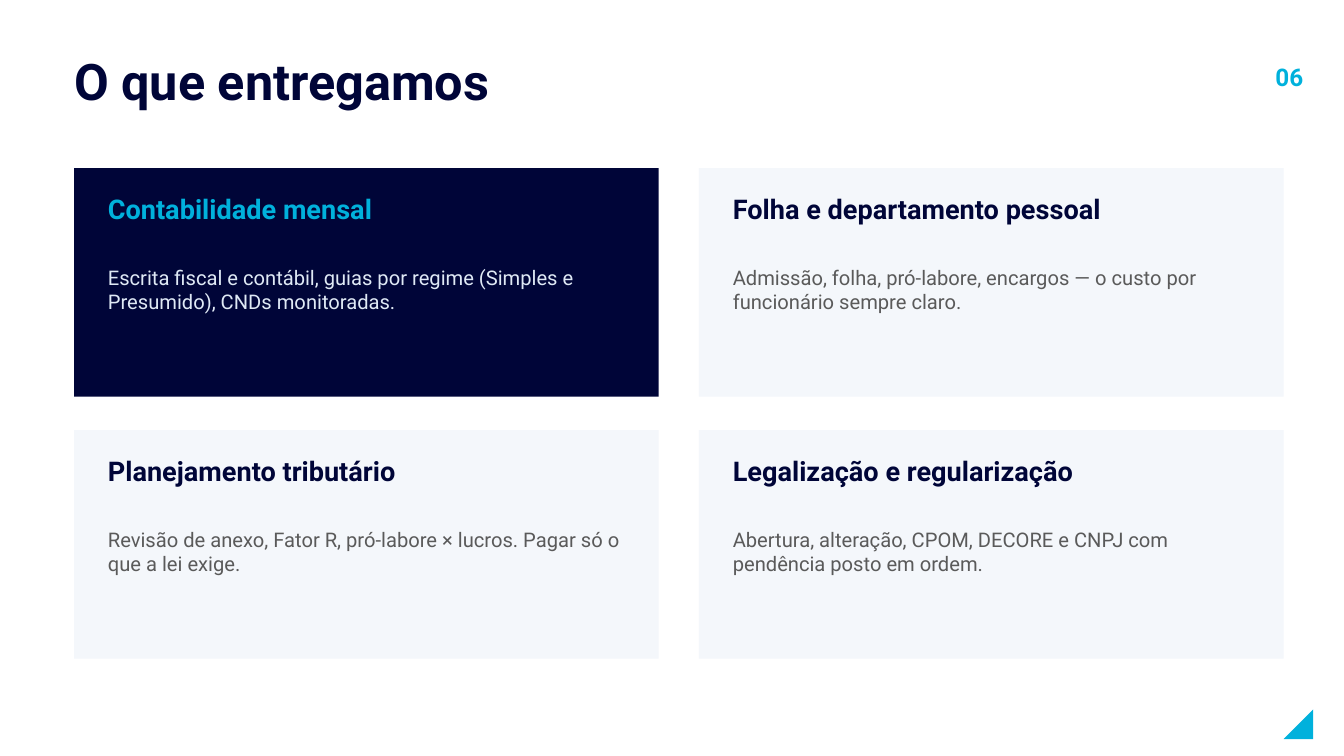
import pptx
import pptx.dml.color
import pptx.enum.shapes
import pptx.enum.text
import pptx.util

Cm = pptx.util.Cm
Align = pptx.enum.text.PP_ALIGN
Anchor = pptx.enum.text.MSO_ANCHOR
Preset = pptx.enum.shapes.MSO_SHAPE

FONT = "Roboto"
COLORS = {
    "navy": "000538",
    "cyan": "00B1DC",
    "pale": "F4F7FB",
    "ice": "DFE9F5",
    "gray": "5A5A5A",
}

CARDS = [
    ("Contabilidade mensal",
     "Escrita fiscal e contábil, guias por regime (Simples e Presumido), CNDs monitoradas."),
    ("Folha e departamento pessoal",
     "Admissão, folha, pró-labore, encargos — o custo por funcionário sempre claro."),
    ("Planejamento tributário",
     "Revisão de anexo, Fator R, pró-labore × lucros. Pagar só o que a lei exige."),
    ("Legalização e regularização",
     "Abertura, alteração, CPOM, DECORE e CNPJ com pendência posto em ordem."),
]
COLUMNS = 2
GRID_LEFT, GRID_TOP = 1.4, 3.18
CARD_WIDTH, CARD_HEIGHT = 11.05, 4.32
GAP_X, GAP_Y = 0.76, 0.63
PADDING, TEXT_WIDTH = 0.64, 9.9


def rgb(name):
    return pptx.dml.color.RGBColor.from_string(COLORS[name])


def write_text(shape, text, size, color, bold=False, align=Align.LEFT, anchor=Anchor.TOP):
    frame = shape.text_frame
    frame.word_wrap = True
    frame.auto_size = pptx.enum.text.MSO_AUTO_SIZE.NONE
    frame.vertical_anchor = anchor
    frame.margin_left = frame.margin_right = frame.margin_top = frame.margin_bottom = 0
    paragraph = frame.paragraphs[0]
    paragraph.text = text
    paragraph.alignment = align
    font = paragraph.font
    font.name = FONT
    font.size = pptx.util.Pt(size)
    font.bold = bold
    font.color.rgb = rgb(color)


def add_text(slide, left, top, width, height, text, size, color, **style):
    box = slide.shapes.add_textbox(Cm(left), Cm(top), Cm(width), Cm(height))
    write_text(box, text, size, color, **style)


def add_filled_shape(slide, preset, left, top, width, height, color):
    shape = slide.shapes.add_shape(preset, Cm(left), Cm(top), Cm(width), Cm(height))
    shape.shadow.inherit = False
    shape.fill.solid()
    shape.fill.fore_color.rgb = rgb(color)
    shape.line.fill.background()
    return shape


def set_title(slide, text):
    title = slide.shapes.title
    title.left, title.top = Cm(GRID_LEFT), Cm(0.76)
    title.width, title.height = Cm(21.34), Cm(1.52)
    write_text(title, text, 27, "navy", bold=True, anchor=Anchor.MIDDLE)


def add_corner_mark(slide):
    triangle = add_filled_shape(slide, Preset.RIGHT_TRIANGLE, 24.26, 13.41, 0.56, 0.56, "cyan")
    triangle._element.spPr.xfrm.set("flipH", "1")


def add_card(slide, index, heading, description):
    row, column = divmod(index, COLUMNS)
    left = GRID_LEFT + column * (CARD_WIDTH + GAP_X)
    top = GRID_TOP + row * (CARD_HEIGHT + GAP_Y)
    highlighted = index == 0
    fill, heading_color, body_color = (
        ("navy", "cyan", "ice") if highlighted else ("pale", "navy", "gray"))
    add_filled_shape(slide, Preset.RECTANGLE, left, top, CARD_WIDTH, CARD_HEIGHT, fill)
    text_left = left + PADDING
    add_text(slide, text_left, top + 0.46, TEXT_WIDTH, 1.14,
             heading, 14.5, heading_color, bold=True)
    add_text(slide, text_left, top + 1.83, TEXT_WIDTH, 2.16,
             description, 10.8, body_color)


def main():
    presentation = pptx.Presentation()
    presentation.slide_width, presentation.slide_height = Cm(25.4), Cm(14.29)
    title_only = presentation.slide_layouts.get_by_name("Title Only")
    slide = presentation.slides.add_slide(title_only)
    set_title(slide, "O que entregamos")
    add_text(slide, 23.11, 0.81, 1.52, 1.27, "06", 13, "cyan",
             bold=True, align=Align.RIGHT, anchor=Anchor.MIDDLE)
    add_corner_mark(slide)
    for index, (heading, description) in enumerate(CARDS):
        add_card(slide, index, heading, description)
    presentation.save("out.pptx")


if __name__ == "__main__":
    main()
